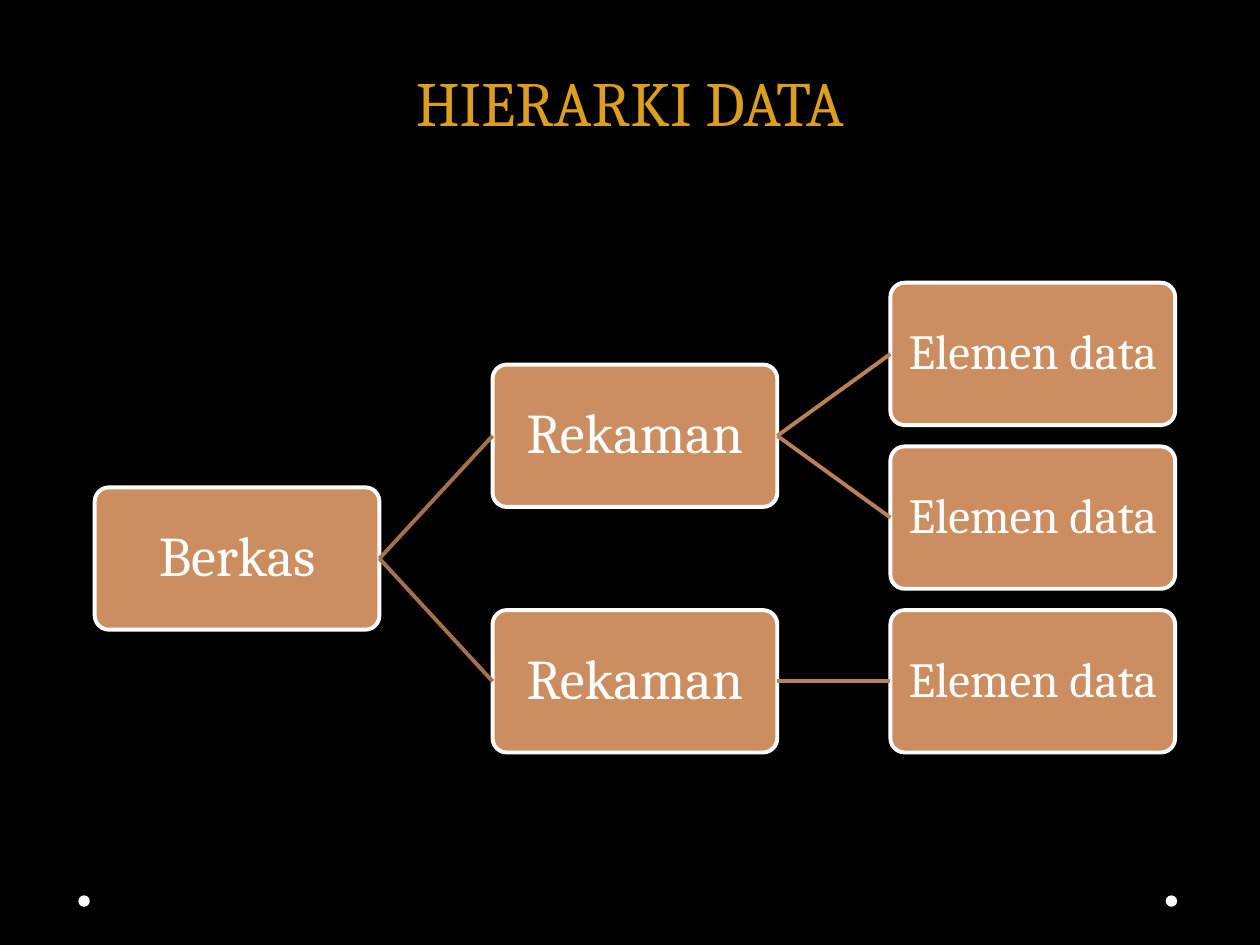
from pptx import Presentation
from pptx.dml.color import RGBColor
from pptx.enum.shapes import MSO_CONNECTOR, MSO_SHAPE
from pptx.enum.text import MSO_ANCHOR, PP_ALIGN
from pptx.oxml.ns import qn
from pptx.util import Cm, Pt
from lxml import etree

ROUND, DOT = MSO_SHAPE.ROUNDED_RECTANGLE, MSO_SHAPE.OVAL
LINE = MSO_CONNECTOR.STRAIGHT
MIDDLE, BOTTOM = MSO_ANCHOR.MIDDLE, MSO_ANCHOR.BOTTOM
CENTER = PP_ALIGN.CENTER
LEFT, RIGHT = 1, 3

HEX = {"back": "000000", "title": "DC9E1F", "white": "FFFFFF",
       "box": "CC8E60", "near": "A3724D", "far": "B98157"}
COLORS = {name: RGBColor.from_string(code) for name, code in HEX.items()}


def write(shape, text, size, color, anchor, spacing):
    frame = shape.text_frame
    frame.word_wrap = True
    frame.vertical_anchor = anchor
    par = frame.paragraphs[0]
    par.alignment = CENTER
    par.line_spacing = spacing
    run = par.add_run()
    run.text = text
    run.font.name = "Cambria"
    run.font.size = Pt(size)
    run.font.color.rgb = COLORS[color]


deck = Presentation()
deck.slide_width, deck.slide_height = Cm(25.4), Cm(19.05)
slide = deck.slides.add_slide(deck.slide_layouts[6])
slide.background.fill.solid()
slide.background.fill.fore_color.rgb = COLORS["back"]

# Corner dots
for left in (23.5, 1.58):
    dot = slide.shapes.add_shape(DOT, Cm(left), Cm(18.05), Cm(0.23), Cm(0.23))
    dot.shadow.inherit = False
    dot.fill.solid()
    dot.fill.fore_color.rgb = COLORS["white"]
    dot.line.fill.background()

title = slide.shapes.add_textbox(Cm(1.27), 0, Cm(22.86), Cm(2.92))
write(title, "HIERARKI DATA", 36, "title", BOTTOM, Pt(58))

# Tree: text, level, row (a parent sits midway between its children), parent
nodes = [
    ("Berkas", 0, 1.25, None),
    ("Rekaman", 1, 0.5, 0),
    ("Elemen data", 2, 0, 1),
    ("Elemen data", 2, 1, 1),
    ("Rekaman", 1, 2, 0),
    ("Elemen data", 2, 2, 4),
]
sizes = [32, 32, 28]
boxes = []
for text, level, row, parent in nodes:
    box = slide.shapes.add_shape(ROUND, Cm(1.91 + 8.02 * level),
                                 Cm(5.7 + 3.3 * row), Cm(5.74), Cm(2.87))
    box.adjustments[0] = 0.1
    box.shadow.inherit = False
    box.fill.solid()
    box.fill.fore_color.rgb = COLORS["box"]
    box.line.color.rgb = COLORS["white"]
    box.line.width = Pt(2.25)
    frame = box.text_frame
    frame.margin_left = frame.margin_right = Cm(0.05)
    frame.margin_top = frame.margin_bottom = Cm(0.05)
    write(box, text, sizes[level], "white", MIDDLE, 0.9)
    boxes.append(box)

for box, (text, level, row, parent) in zip(boxes, nodes):
    if parent is None:
        continue
    link = slide.shapes.add_connector(LINE, 0, 0, 0, 0)
    link.begin_connect(boxes[parent], RIGHT)
    link.end_connect(box, LEFT)
    link.line.color.rgb = COLORS["near" if level == 1 else "far"]
    link.line.width = Pt(2.25)
    etree.SubElement(link.element.spPr, qn("a:effectLst"))

deck.save("out.pptx")
